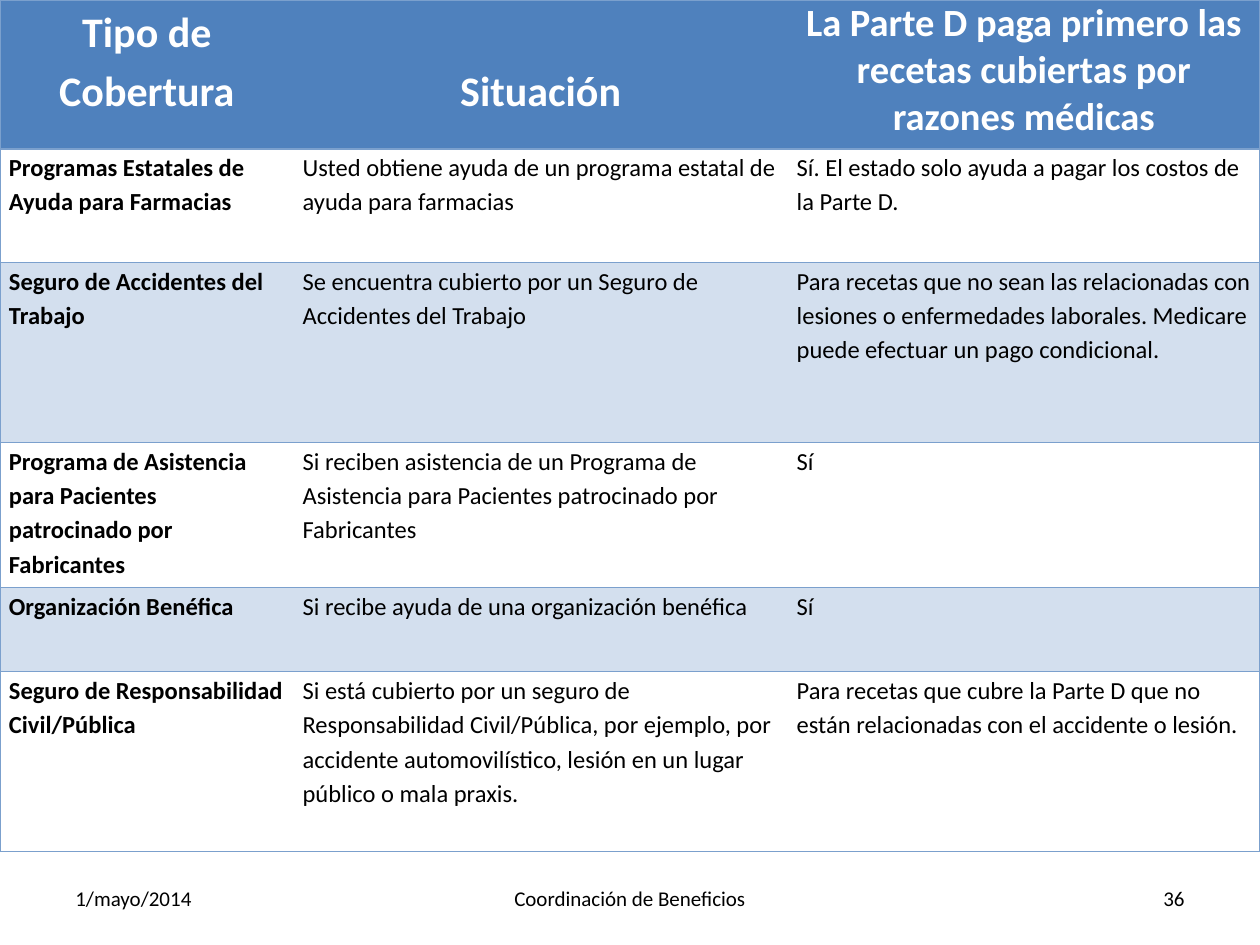
from lxml.etree import SubElement
from pptx import Presentation
from pptx.dml.color import RGBColor
from pptx.enum.text import MSO_ANCHOR, PP_ALIGN
from pptx.oxml.ns import qn
from pptx.util import Cm, Pt

COLORS = {"header": "4F81BD", "band": "D3DFEE", "plain": "FFFFFF",
          "border": "7BA0CD", "ink": "000000", "header_ink": "FFFFFF"}
FONT = "Calibri"

COLUMN_WIDTHS = [5.92, 9.96, 9.52]
ROW_HEIGHTS = [3.0, 2.29, 3.63, 2.92, 1.7, 3.63]

COVERAGES = [
    ("Programas Estatales de Ayuda para Farmacias",
     "Usted obtiene ayuda de un programa estatal de ayuda para farmacias",
     "Sí. El estado solo ayuda a pagar los costos de la Parte D."),
    ("Seguro de Accidentes del Trabajo",
     "Se encuentra cubierto por un Seguro de Accidentes del Trabajo",
     "Para recetas que no sean las relacionadas con lesiones o enfermedades "
     "laborales. Medicare puede efectuar un pago condicional."),
    ("Programa de Asistencia para Pacientes patrocinado por Fabricantes",
     "Si reciben asistencia de un Programa de Asistencia para Pacientes "
     "patrocinado por Fabricantes",
     "Sí"),
    ("Organización Benéfica",
     "Si recibe ayuda de una organización benéfica",
     "Sí"),
    ("Seguro de Responsabilidad Civil/Pública",
     "Si está cubierto por un seguro de Responsabilidad Civil/Pública, por "
     "ejemplo, por accidente automovilístico, lesión en un lugar público o "
     "mala praxis.",
     "Para recetas que cubre la Parte D que no están relacionadas con el "
     "accidente o lesión."),
]


class SlideBuilder:
    def __init__(self, slide):
        self.slide = slide

    def run(self, paragraph, text, size, color="ink", bold=False):
        run = paragraph.add_run()
        run.text = text
        run.font.name = FONT
        run.font.size = Pt(size)
        run.font.bold = bold
        run.font.color.rgb = RGBColor.from_string(COLORS[color])

    def text(self, words, left, top, width, height, align):
        frame = self.slide.shapes.add_textbox(
            Cm(left), Cm(top), Cm(width), Cm(height)).text_frame
        frame.word_wrap = True
        frame.vertical_anchor = MSO_ANCHOR.MIDDLE
        frame.paragraphs[0].alignment = align
        self.run(frame.paragraphs[0], words, 12)

    def table(self, widths, heights):
        table = self.slide.shapes.add_table(
            len(heights), len(widths), 0, 0,
            Cm(sum(widths)), Cm(sum(heights))).table
        for column, width in zip(table.columns, widths):
            column.width = Cm(width)
        for row, height in zip(table.rows, heights):
            row.height = Cm(height)
        return table

    def borders(self, cell, visible):
        properties = cell._tc.get_or_add_tcPr()
        for side in "LRTB":
            line = SubElement(properties, qn(f"a:ln{side}"), w=str(Pt(1)))
            if side in visible:
                fill = SubElement(line, qn("a:solidFill"))
                SubElement(fill, qn("a:srgbClr"), val=COLORS["border"])
            else:
                SubElement(line, qn("a:noFill"))

    def cell(self, cell, runs, fill, visible, align=PP_ALIGN.LEFT,
             spacing=1.15, after=0, top=0):
        self.borders(cell, visible)
        cell.fill.solid()
        cell.fill.fore_color.rgb = RGBColor.from_string(COLORS[fill])
        cell.margin_left = cell.margin_right = Cm(0.18)
        cell.margin_top, cell.margin_bottom = Cm(top), 0
        paragraph = cell.text_frame.paragraphs[0]
        paragraph.alignment = align
        paragraph.line_spacing = spacing
        paragraph.space_after = Pt(after)
        for text, size, color, bold in runs:
            self.run(paragraph, text, size, color, bold)


def main():
    deck = Presentation()
    deck.slide_width, deck.slide_height = Cm(25.4), Cm(19.05)
    builder = SlideBuilder(deck.slides.add_slide(deck.slide_layouts[6]))

    # Coverage table: only the outer sides and the row rules show
    coverage = builder.table(COLUMN_WIDTHS, ROW_HEIGHTS)
    sides = ["LTB", "TB", "RTB"]

    # Header row
    headers = [
        ([("Tipo de Cobertura", 24, "header_ink", True)], 1.15, 0),
        ([("Situación", 24, "header_ink", True)], 1.15, 1.19),
        ([("La Parte D paga primero las recetas cubiertas por", 22, "header_ink", True),
          (" ", 18, "ink", False),
          ("razones médicas", 22, "header_ink", True)], 1.0, 0),
    ]
    for column, (runs, spacing, top) in enumerate(headers):
        builder.cell(coverage.cell(0, column), runs, "header", sides[column],
                     PP_ALIGN.CENTER, spacing, top=top)

    # Body rows, banded on every second one
    for row, texts in enumerate(COVERAGES, start=1):
        fill = "plain" if row % 2 else "band"
        for column, words in enumerate(texts):
            builder.cell(coverage.cell(row, column),
                         [(words, 14, "ink", column == 0)], fill,
                         sides[column], after=10 if row == 2 else 0)

    # Footer
    for words, left, width, align in [
            ("1/mayo/2014", 1.27, 5.92, PP_ALIGN.LEFT),
            ("Coordinación de Beneficios", 7.2, 11.0, PP_ALIGN.CENTER),
            ("36", 18.21, 5.92, PP_ALIGN.RIGHT)]:
        builder.text(words, left, 17.6, width, 1.02, align)

    deck.save("out.pptx")


if __name__ == "__main__":
    main()
